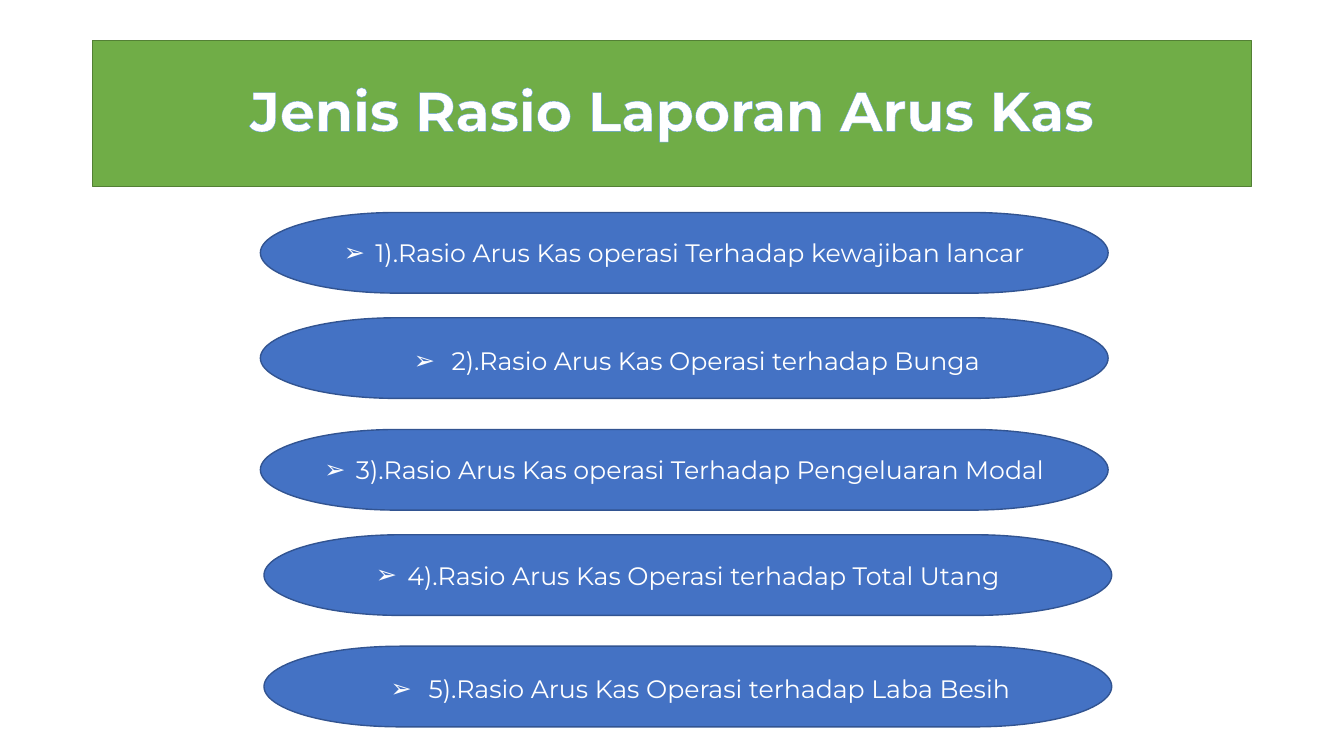
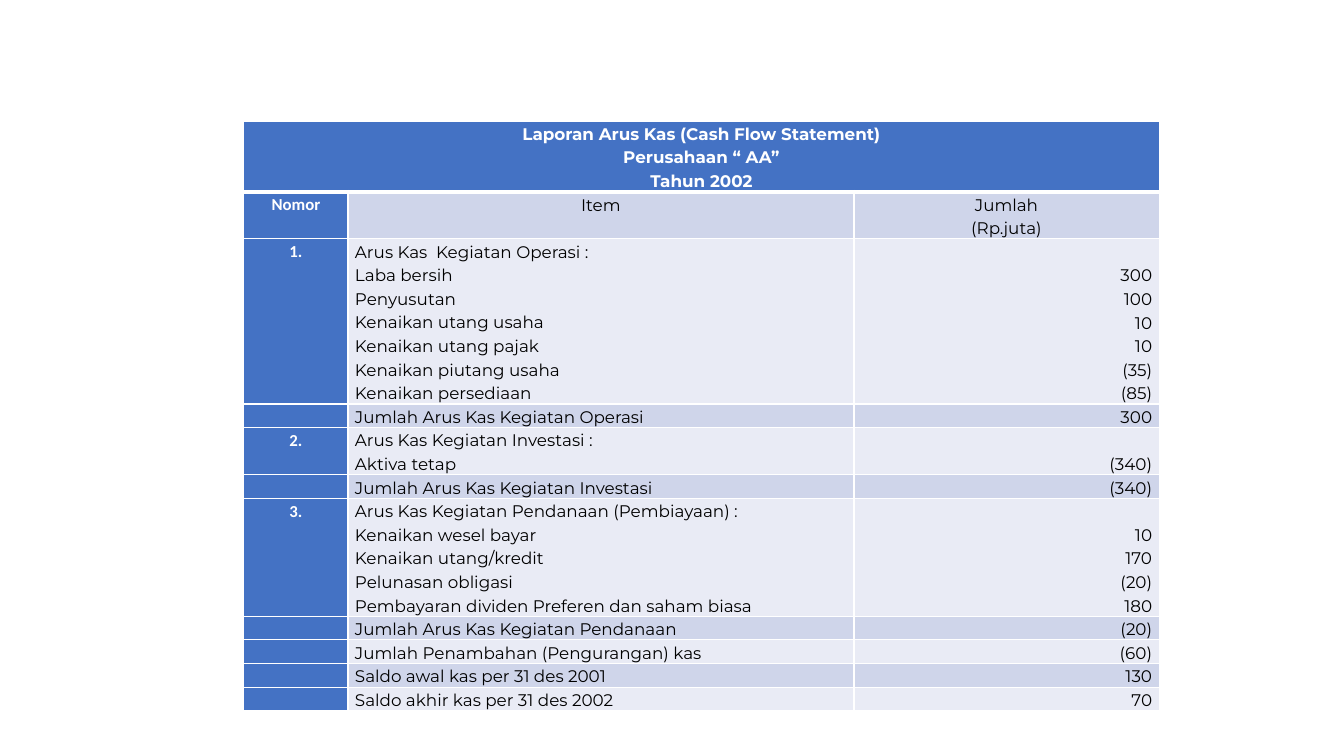
from lxml import etree
from pptx import Presentation
from pptx.dml.color import RGBColor
from pptx.enum.shapes import MSO_SHAPE as SHAPE
from pptx.enum.text import MSO_ANCHOR as ANCHOR, MSO_AUTO_SIZE as AUTO, PP_ALIGN as ALIGN
from pptx.oxml.ns import qn
from pptx.util import Pt

WHITE = RGBColor(0xFF, 0xFF, 0xFF)
BLACK = RGBColor(0x00, 0x00, 0x00)
GREEN = RGBColor(0x70, 0xAD, 0x47)
DARK_GREEN = RGBColor(0x53, 0x80, 0x35)
BLUE = RGBColor(0x44, 0x72, 0xC4)
DARK_BLUE = RGBColor(0x32, 0x54, 0x91)
LIGHT_BLUE = RGBColor(0x5B, 0x9B, 0xD5)
BANDS = (RGBColor(0xE9, 0xEB, 0xF5), RGBColor(0xCF, 0xD5, 0xEA))
FONT = "Montserrat"


def put_text(tf, text, size=12, font=FONT, color=WHITE, bold=False,
             align=ALIGN.CENTER, spacing=1.0):
    """Write one paragraph per line of text, all in the same format."""
    for i, line in enumerate(text.split("\n")):
        p = tf.add_paragraph() if i else tf.paragraphs[0]
        p.alignment, p.line_spacing = align, spacing
        if not line:
            p._p.get_or_add_endParaRPr().set("sz", str(size * 100))
            continue
        r = p.add_run()
        r.text = line
        r.font.size, r.font.name, r.font.bold = Pt(size), font, bold
        r.font.color.rgb = color


def add_line(parent, tag, color, width, index):
    """Insert a solid DrawingML line (text outline or cell border)."""
    ln = etree.Element(qn(tag), w=str(Pt(width)))
    fill = etree.SubElement(ln, qn("a:solidFill"))
    etree.SubElement(fill, qn("a:srgbClr"), val=str(color))
    parent.insert(index, ln)


prs = Presentation()
prs.slide_width, prs.slide_height = Pt(960), Pt(540)

# Slide 1: title band
s = prs.slides.add_slide(prs.slide_layouts[5])
title = s.shapes.title
title.left, title.top, title.width, title.height = Pt(66), Pt(28.8), Pt(828), Pt(104.4)
title.fill.solid()
title.fill.fore_color.rgb = GREEN
title.line.color.rgb = DARK_GREEN
title.line.width = Pt(1)
tf = title.text_frame
tf.auto_size, tf.vertical_anchor = AUTO.NONE, ANCHOR.MIDDLE
put_text(tf, "Jenis Rasio Laporan Arus Kas", size=39.6, bold=True, spacing=0.9)
add_line(tf.paragraphs[0].runs[0].font._element, "a:ln", LIGHT_BLUE, 0.8, 0)

# Slide 1: ratio list; left, top, text indent, hanging indent, line spacing, text
NARROW, WIDE = (22.5, 22.5, 1.0), (45, 27, 1.15)
ratios = [
    (186, 151.8, NARROW, "1).Rasio Arus Kas operasi Terhadap kewajiban lancar"),
    (186, 227, WIDE, "2).Rasio Arus Kas Operasi terhadap Bunga"),
    (186, 306.8, NARROW, "3).Rasio Arus Kas operasi Terhadap Pengeluaran Modal"),
    (188.6, 382, NARROW, "4).Rasio Arus Kas Operasi terhadap Total Utang"),
    (188.6, 461.6, WIDE, "5).Rasio Arus Kas Operasi terhadap Laba Besih"),
]
for left, top, (margin, hanging, spacing), text in ratios:
    sp = s.shapes.add_shape(SHAPE.FLOWCHART_TERMINATOR, Pt(left), Pt(top), Pt(605.5), Pt(57.6))
    sp.shadow.inherit = False
    sp.fill.solid()
    sp.fill.fore_color.rgb = BLUE
    sp.line.color.rgb = DARK_BLUE
    sp.line.width = Pt(1)
    tf = sp.text_frame
    tf.word_wrap, tf.vertical_anchor = True, ANCHOR.MIDDLE
    put_text(tf, text, size=18, spacing=spacing)
    pPr = tf.paragraphs[0]._p.get_or_add_pPr()
    pPr.set("marL", str(Pt(margin)))
    pPr.set("indent", str(Pt(-hanging)))
    etree.SubElement(pPr, qn("a:buFont"), typeface="Wingdings")
    pPr[-1].set("typeface", "Arial")
    etree.SubElement(pPr, qn("a:buChar"), char="➢")

# Slide 2: cash flow statement
rows = [
    ("Laporan Arus Kas (Cash Flow Statement)\nPerusahaan “ AA”\nTahun 2002", "", ""),
    ("Nomor", "Item", "Jumlah\n(Rp.juta)"),
    ("1.", "Arus Kas  Kegiatan Operasi :\nLaba bersih\nPenyusutan\nKenaikan utang usaha\n"
           "Kenaikan utang pajak\nKenaikan piutang usaha\nKenaikan persediaan",
     "300\n100\n10\n10\n(35)\n(85)"),
    ("", "Jumlah Arus Kas Kegiatan Operasi", "300"),
    ("2.", "Arus Kas Kegiatan Investasi :\nAktiva tetap", "(340)"),
    ("", "Jumlah Arus Kas Kegiatan Investasi", "(340)"),
    ("3.", "Arus Kas Kegiatan Pendanaan (Pembiayaan) :\nKenaikan wesel bayar\n"
           "Kenaikan utang/kredit\nPelunasan obligasi\n"
           "Pembayaran dividen Preferen dan saham biasa",
     "10\n170\n(20)\n180"),
    ("", "Jumlah Arus Kas Kegiatan Pendanaan", "(20)"),
    ("", "Jumlah Penambahan (Pengurangan) kas", "(60)"),
    ("", "Saldo awal kas per 31 des 2001", "130"),
    ("", "Saldo akhir kas per 31 des 2002", "70"),
]
LINE_HEIGHT = 16.8
line_counts = [max(text.count("\n") + 1 for text in row) for row in rows]

s = prs.slides.add_slide(prs.slide_layouts[6])
table = s.shapes.add_table(len(rows), 3, Pt(174.2), Pt(86.4), Pt(653.8),
                           Pt(LINE_HEIGHT * sum(line_counts))).table
table.first_row = table.horz_banding = False
for column, width in zip(table.columns, (74.4, 361.4, 218)):
    column.width = Pt(width)
table.cell(0, 0).merge(table.cell(0, 2))

for i, row in enumerate(rows):
    table.rows[i].height = Pt(LINE_HEIGHT * line_counts[i])
    for j, text in enumerate(row):
        cell = table.cell(i, j)
        heading = i == 0 or j == 0
        cell.margin_left = cell.margin_right = Pt(5)
        cell.margin_top = cell.margin_bottom = 0
        # Amounts sit at the bottom, level with their items
        cell.vertical_anchor = ANCHOR.BOTTOM if j == 2 else ANCHOR.TOP
        cell.fill.solid()
        cell.fill.fore_color.rgb = BLUE if heading else BANDS[i % 2]
        align = ALIGN.CENTER if i < 2 else (ALIGN.CENTER, ALIGN.JUSTIFY, ALIGN.RIGHT)[j]
        put_text(cell.text_frame, text, font="Calibri" if i and j == 0 else FONT,
                 color=WHITE if heading else BLACK, bold=heading,
                 align=align, spacing=1.15)
        # White borders, heavier under the heading row
        widths = (1, 1, 3 if i == 1 else 1, 3 if i == 0 else 1)
        for k, (side, width) in enumerate(zip("LRTB", widths)):
            add_line(cell._tc.get_or_add_tcPr(), f"a:ln{side}", WHITE, width, k)

prs.save("out.pptx")
